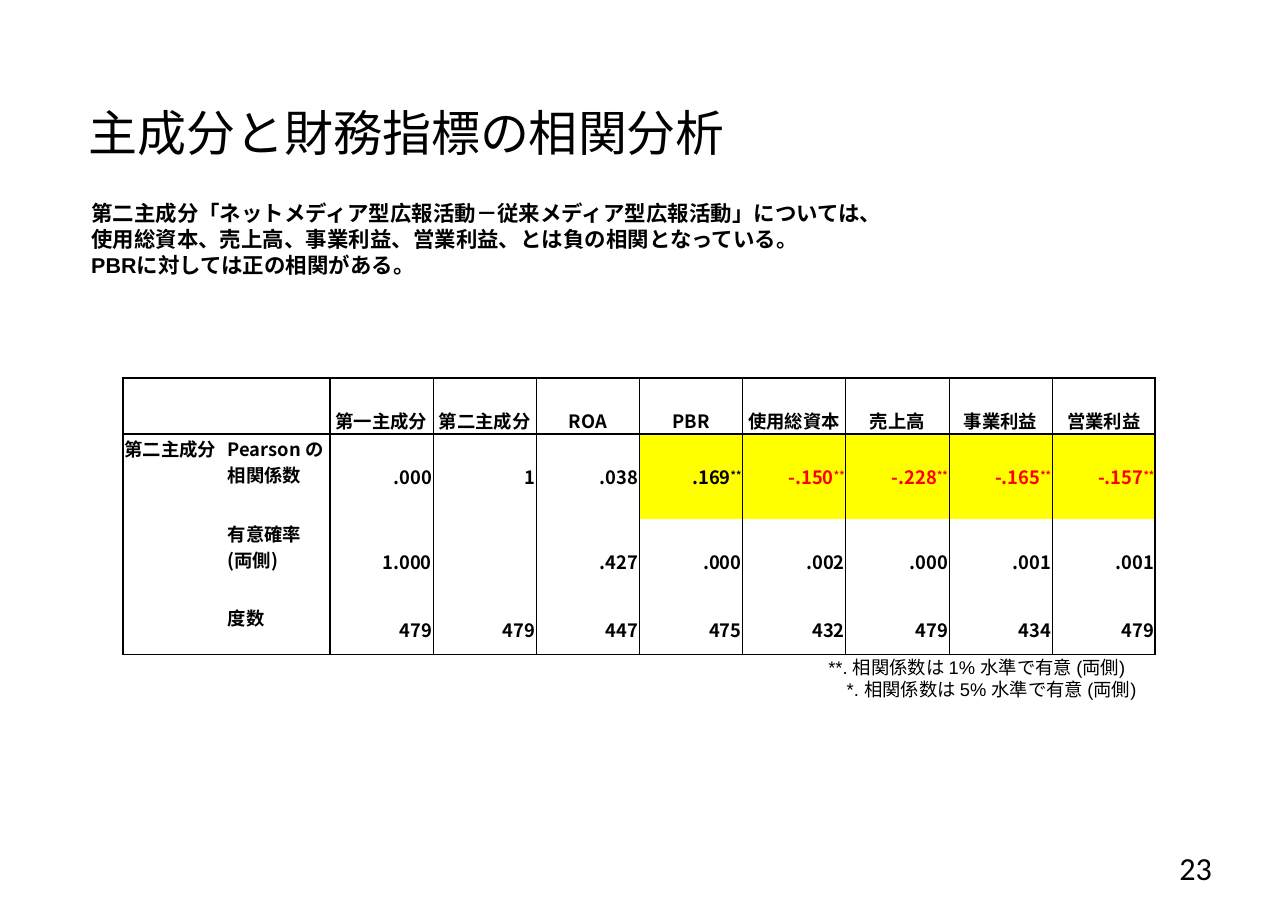
from dataclasses import dataclass

from lxml import etree
from pptx import Presentation
from pptx.dml.color import RGBColor
from pptx.enum.text import MSO_ANCHOR, MSO_AUTO_SIZE, PP_ALIGN
from pptx.oxml.ns import qn
from pptx.util import Emu, Pt

LEFT, CENTER, RIGHT = PP_ALIGN.LEFT, PP_ALIGN.CENTER, PP_ALIGN.RIGHT
TOP, MIDDLE, BOTTOM = MSO_ANCHOR.TOP, MSO_ANCHOR.MIDDLE, MSO_ANCHOR.BOTTOM
FIXED, GROW = MSO_AUTO_SIZE.NONE, MSO_AUTO_SIZE.SHAPE_TO_FIT_TEXT

EMU_PER_PX = 9144  # 100 px to the inch
COLORS = {"ink": "000000", "negative": "FF0000", "highlight": "FFFF00"}
CJK_FONT = "Noto Sans CJK JP"
THICK, THIN, NONE = 1.5, 0.5, 0


@dataclass(frozen=True)
class Style:
    size: int
    font: str
    bold: bool = False


@dataclass(frozen=True)
class TextBlock:
    box: tuple[int, int, int, int]
    lines: tuple[str, ...]
    style: Style
    align: PP_ALIGN = LEFT
    anchor: MSO_ANCHOR = TOP
    insets: tuple[int, int] = (10, 5)
    auto_size: MSO_AUTO_SIZE = GROW


TITLE = TextBlock((69, 85, 812, 70), ("主成分と財務指標の相関分析",),
                  Style(32, "Calibri"), LEFT, MIDDLE, (11, 6), FIXED)
TEXT_BLOCKS = (
    # Findings
    TextBlock((73, 177, 1016, 81), (
        "第二主成分「ネットメディア型広報活動－従来メディア型広報活動」については、",
        "使用総資本、売上高、事業利益、営業利益、とは負の相関となっている。",
        "PBRに対しては正の相関がある。",
    ), Style(14, "Arial", True)),
    # Page number
    TextBlock((838, 766, 273, 44), ("23",), Style(21, "Calibri"),
              RIGHT, MIDDLE, (11, 6), FIXED),
    # Significance notes
    TextBlock((742, 591, 307, 50), (
        "**. 相関係数は 1% 水準で有意 (両側)",
        "　*. 相関係数は 5% 水準で有意 (両側)",
    ), Style(12, "Arial")),
)

TABLE_BOX = (112, 343, 937, 251)
ROW_HEIGHTS = (51, 77, 77, 46)
CELL_STYLE = Style(12, CJK_FONT, True)
CORRELATIONS = (
    ("", "", "第一主成分", "第二主成分", "ROA", "PBR",
     "使用総資本", "売上高", "事業利益", "営業利益"),
    ("第二主成分", "Pearson の相関係数", ".000", "1", ".038", ".169**",
     "-.150**", "-.228**", "-.165**", "-.157**"),
    ("", "有意確率 (両側)", "1.000", "", ".427", ".000",
     ".002", ".000", ".001", ".001"),
    ("", "度数", "479", "479", "447", "475", "432", "479", "434", "479"),
)
LABEL_COLUMNS = 2
# Line weight at each grid line of the table
COLUMN_EDGES = (THICK, NONE, THICK) + (THIN,) * 7 + (THICK,)
ROW_EDGES = (THICK, THICK, NONE, NONE, THIN)


def px(length: int) -> Emu:
    return Emu(length * EMU_PER_PX)


def add_run(paragraph, text: str, style: Style, color: str = "ink",
            superscript: bool = False) -> None:
    run = paragraph.add_run()
    run.text = text
    run.font.size = Pt(style.size)
    run.font.bold = style.bold
    run.font.name = style.font
    run.font.color.rgb = RGBColor.from_string(COLORS[color])
    properties = run._r.get_or_add_rPr()
    etree.SubElement(properties, qn("a:ea"), typeface=CJK_FONT)
    if superscript:
        properties.set("baseline", "30000")


def fill_text(shape, block: TextBlock) -> None:
    shape.left, shape.top, shape.width, shape.height = map(px, block.box)
    frame = shape.text_frame
    frame.word_wrap = True
    frame.auto_size = block.auto_size
    frame.vertical_anchor = block.anchor
    frame.margin_left = frame.margin_right = px(block.insets[0])
    frame.margin_top = frame.margin_bottom = px(block.insets[1])
    for index, line in enumerate(block.lines):
        paragraph = frame.add_paragraph() if index else frame.paragraphs[0]
        paragraph.alignment = block.align
        add_run(paragraph, line, block.style)


def set_borders(cell, row: int, column: int) -> None:
    weights = {
        "a:lnL": COLUMN_EDGES[column],
        "a:lnR": COLUMN_EDGES[column + cell.span_width],
        "a:lnT": ROW_EDGES[row],
        "a:lnB": ROW_EDGES[row + cell.span_height],
    }
    properties = cell._tc.get_or_add_tcPr()
    for side, weight in weights.items():
        line = etree.SubElement(properties, qn(side), w=str(Pt(weight)))
        if weight:
            fill = etree.SubElement(line, qn("a:solidFill"))
            etree.SubElement(fill, qn("a:srgbClr"), val=COLORS["ink"])
        else:
            etree.SubElement(line, qn("a:noFill"))


def fill_cell(cell, text: str, row: int, column: int) -> None:
    cell.margin_left = cell.margin_right = cell.margin_top = px(1)
    cell.margin_bottom = 0
    set_borders(cell, row, column)
    value = text.rstrip("*")
    stars = text[len(value):]
    if stars:
        cell.fill.solid()
        cell.fill.fore_color.rgb = RGBColor.from_string(COLORS["highlight"])
    else:
        cell.fill.background()

    paragraph = cell.text_frame.paragraphs[0]
    if row == 0:
        cell.vertical_anchor, paragraph.alignment = BOTTOM, CENTER
    elif column < LABEL_COLUMNS:
        cell.vertical_anchor, paragraph.alignment = TOP, LEFT
    else:
        cell.vertical_anchor, paragraph.alignment = MIDDLE, RIGHT
    color = "negative" if value.startswith("-") else "ink"
    if value:
        add_run(paragraph, value, CELL_STYLE, color)
    if stars:
        add_run(paragraph, stars, CELL_STYLE, color, superscript=True)


def add_correlation_table(slide) -> None:
    column_count = len(CORRELATIONS[0])
    table = slide.shapes.add_table(len(CORRELATIONS), column_count,
                                   *map(px, TABLE_BOX)).table
    table.first_row = table.horz_banding = False
    for column in table.columns:
        column.width = px(TABLE_BOX[2]) // column_count
    for row, height in zip(table.rows, ROW_HEIGHTS):
        row.height = px(height)
    table.cell(0, 0).merge(table.cell(0, 1))
    table.cell(1, 0).merge(table.cell(3, 0))
    for row, texts in enumerate(CORRELATIONS):
        for column, text in enumerate(texts):
            fill_cell(table.cell(row, column), text, row, column)


def main() -> None:
    presentation = Presentation()
    presentation.slide_width, presentation.slide_height = px(1169), px(827)
    slide = presentation.slides.add_slide(presentation.slide_layouts[5])
    fill_text(slide.shapes.title, TITLE)
    add_correlation_table(slide)
    for block in TEXT_BLOCKS:
        fill_text(slide.shapes.add_textbox(*map(px, block.box)), block)
    presentation.save("out.pptx")


if __name__ == "__main__":
    main()
